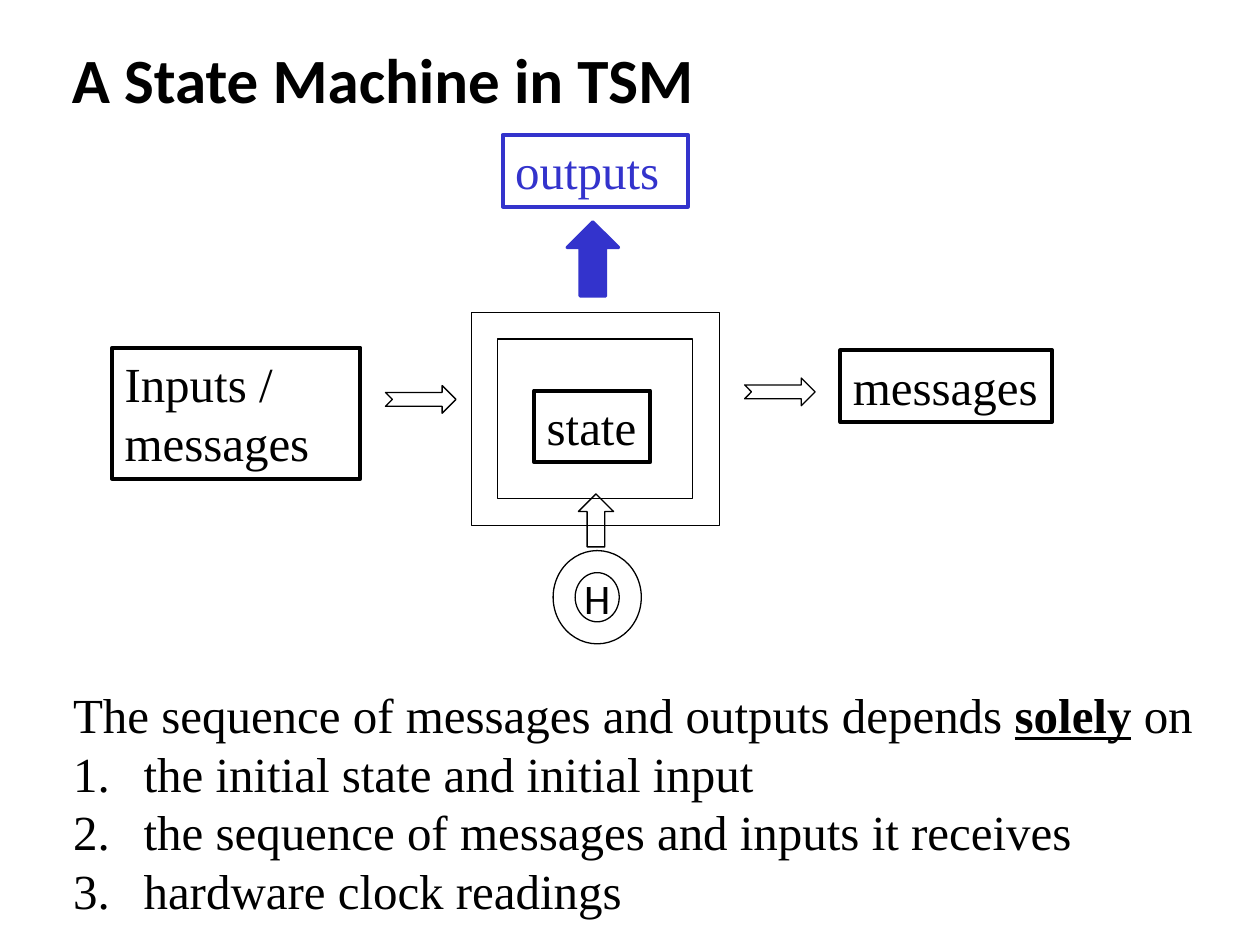
import pptx
import pptx.util
import pptx.dml.color
import pptx.enum.shapes
import pptx.enum.text
import pptx.oxml.ns
import lxml.etree

Inches = pptx.util.Inches
Pt = pptx.util.Pt
SHAPE = pptx.enum.shapes.MSO_SHAPE
ALIGN = pptx.enum.text.PP_ALIGN
ANCHOR = pptx.enum.text.MSO_ANCHOR
AUTO = pptx.enum.text.MSO_AUTO_SIZE
BLACK = "000000"
BLUE = "3333CC"
SERIF = "Times New Roman"


def rgb(value):
    """Return the colour for a hex string."""
    return pptx.dml.color.RGBColor.from_string(value)


def style_runs(tf, size, font, color=BLACK, bold=False):
    """Format every run of a text frame."""
    for p in tf.paragraphs:
        for r in p.runs:
            r.font.size = Pt(size)
            r.font.name = font
            r.font.bold = bold
            r.font.color.rgb = rgb(color)


def place(sp, left, top, width, height):
    """Move and size a shape, in inches."""
    sp.left, sp.top = Inches(left), Inches(top)
    sp.width, sp.height = Inches(width), Inches(height)


def add_outline(slide, kind, box, color=BLACK, weight=0.75, fill=None):
    """Add an outlined preset shape, optionally filled."""
    sp = slide.shapes.add_shape(kind, *(Inches(v) for v in box))
    sp.shadow.inherit = False
    sp.line.color.rgb = rgb(color)
    sp.line.width = Pt(weight)
    if fill:
        sp.fill.solid()
        sp.fill.fore_color.rgb = rgb(fill)
    else:
        sp.fill.background()
    return sp


def add_label(slide, text, box, color=BLACK, wrap=True):
    """Add a boxed label with left-aligned text."""
    sp = add_outline(slide, SHAPE.RECTANGLE, box, color, 2.25)
    tf = sp.text_frame
    tf.text = text
    tf.word_wrap = wrap
    tf.vertical_anchor = ANCHOR.TOP
    for p in tf.paragraphs:
        p.alignment = ALIGN.LEFT
    style_runs(tf, 28, SERIF, color)


def add_clock(slide, left, top, width, height):
    """Add the hardware clock ring."""
    sp = add_outline(slide, SHAPE.DONUT, (left, top, width, height))
    tf = sp.text_frame
    tf.text = "H"
    tf.word_wrap = False
    tf.vertical_anchor = ANCHOR.MIDDLE
    tf.paragraphs[0].alignment = ALIGN.CENTER
    style_runs(tf, 24, "Calibri")


def add_diagram(slide, left, top):
    """Add the state machine with its inputs, outputs and clock."""
    def at(dx, dy, width, height):
        """Return a box offset from the diagram's corner."""
        return left + dx, top + dy, width, height

    add_outline(slide, SHAPE.FRAME, at(2.85, 1.41, 1.97, 1.69))
    for dx, dy in ((2.17, 1.99), (5.02, 1.93)):
        add_outline(slide, SHAPE.NOTCHED_RIGHT_ARROW, at(dx, dy, 0.56, 0.22))
    add_outline(slide, SHAPE.UP_ARROW, at(3.61, 0.69, 0.41, 0.59),
                BLUE, 1.75, BLUE)
    add_label(slide, "Inputs /\nmessages", at(0, 1.69, 1.97, 1.04))
    add_label(slide, "messages", at(5.78, 1.71, 1.68, 0.57))
    add_label(slide, "outputs", at(3.1, 0, 1.47, 0.57), BLUE)
    add_label(slide, "state", at(3.35, 2.03, 0.92, 0.57), wrap=False)
    add_clock(slide, *at(3.5, 3.3, 0.7, 0.74))
    add_outline(slide, SHAPE.UP_ARROW, at(3.7, 2.85, 0.28, 0.42))


def set_numbering(p, numbered):
    """Number a paragraph with a hanging indent, or clear its bullet."""
    pPr = p._p.get_or_add_pPr()
    indent = Inches(0.56) if numbered else 0
    pPr.set("marL", str(indent))
    pPr.set("indent", str(-indent))
    tag = "a:buAutoNum" if numbered else "a:buNone"
    if numbered:
        font = lxml.etree.SubElement(pPr, pptx.oxml.ns.qn("a:buFont"))
        font.set("typeface", "+mj-lt")
    bullet = lxml.etree.SubElement(pPr, pptx.oxml.ns.qn(tag))
    if numbered:
        bullet.set("type", "arabicPeriod")


def fill_title(sp, text, box):
    """Place and format the slide title."""
    place(sp, *box)
    tf = sp.text_frame
    tf.text = text
    tf.auto_size = AUTO.NONE
    tf.vertical_anchor = ANCHOR.MIDDLE
    tf.paragraphs[0].alignment = ALIGN.LEFT
    style_runs(tf, 36, "Calibri", bold=True)


def fill_body(sp, lead, items, box):
    """Place the lead sentence, given as three runs, and the numbered list."""
    place(sp, *box)
    tf = sp.text_frame
    tf.word_wrap = True
    tf.auto_size = AUTO.NONE
    tf.vertical_anchor = ANCHOR.TOP
    first = tf.paragraphs[0]
    for text in lead:
        first.add_run().text = text
    for item in items:
        tf.add_paragraph().text = item
    for i, p in enumerate(tf.paragraphs):
        p.space_before = Pt(0)
        set_numbering(p, i > 0)
    style_runs(tf, 28, SERIF)
    first.runs[1].font.bold = True
    first.runs[1].font.underline = True


def main():
    """Build and save the slide."""
    prs = pptx.Presentation()
    prs.slide_width, prs.slide_height = Inches(10), Inches(7.5)
    slide = prs.slides.add_slide(prs.slide_layouts[1])
    title, body = slide.placeholders
    fill_title(title, "A State Machine in TSM", (0.47, 0.25, 9.19, 0.75))
    add_diagram(slide, 0.89, 1.07)
    fill_body(body,
              ("The sequence of messages and outputs depends ", "solely", " on"),
              ("the initial state and initial input",
               "the sequence of messages and inputs it receives",
               "hardware clock readings"),
              (0.48, 5.38, 9.37, 1.99))
    prs.save("out.pptx")


if __name__ == "__main__":
    main()
